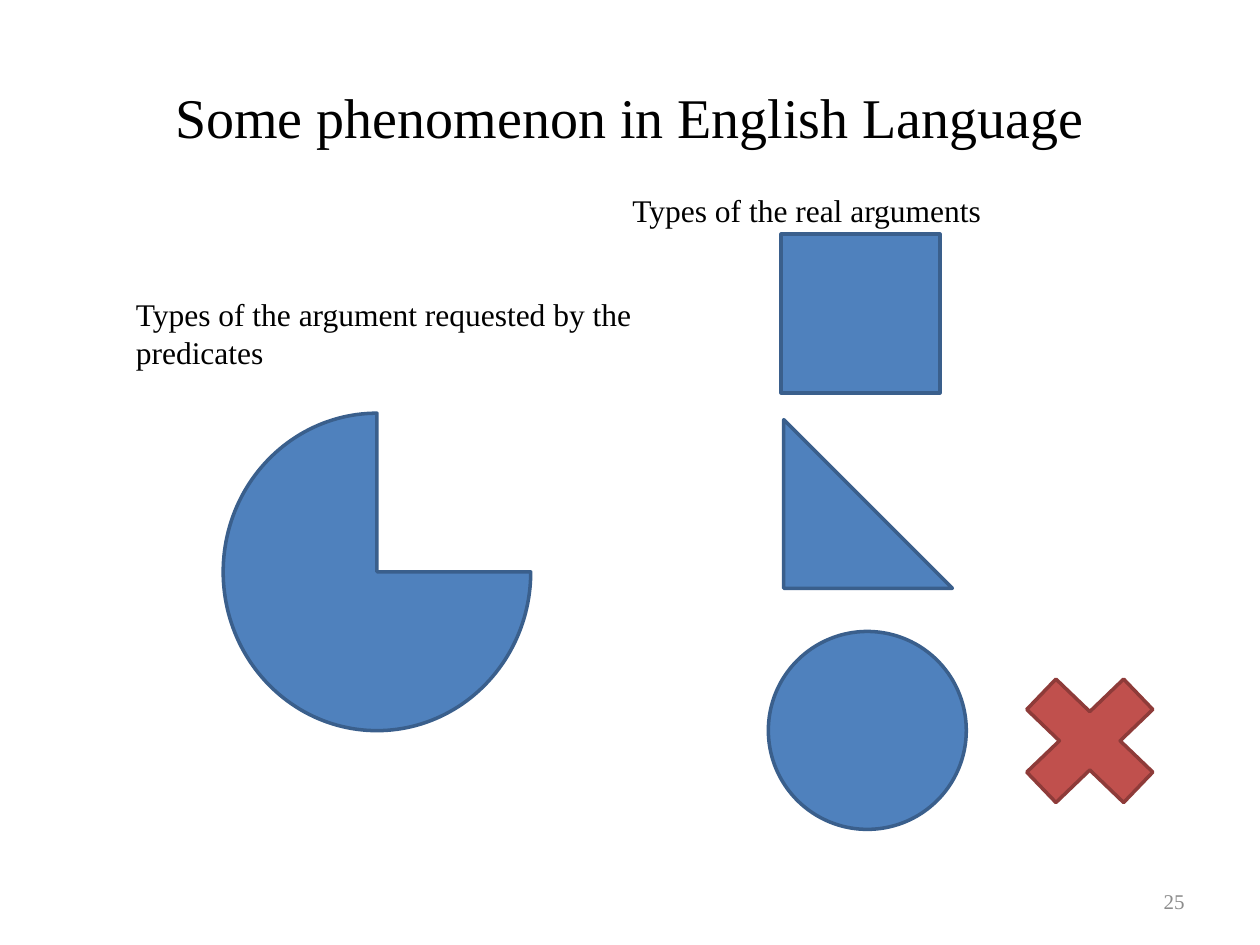
from pptx import Presentation
from pptx.dml.color import RGBColor
from pptx.enum.shapes import MSO_SHAPE
from pptx.enum.text import MSO_ANCHOR, PP_ALIGN
from pptx.util import Cm, Pt

FONT = "Times New Roman"
COLORS = {
    "text": "000000",
    "number": "8C8C8C",
    "blue": "4F81BD",
    "blue_line": "3A5F8C",
    "red": "C0504D",
    "red_line": "8E3B39",
}

# Boxes are left, top, width, height in centimetres.
TITLE = ("Some phenomenon in English Language", (1.27, 0.76, 22.86, 3.18))
LABELS = [
    ("Types of the argument requested by the predicates", (2.49, 5.82, 10.59, 1.8)),
    ("Types of the real arguments", (12.5, 3.73, 10.59, 1.02)),
]
PAGE_NUMBER = ("25", (18.21, 17.65, 5.92, 1.02))
FIGURES = [
    (MSO_SHAPE.PIE, "blue", (4.5, 8.33, 6.2, 6.4)),
    (MSO_SHAPE.RECTANGLE, "blue", (15.75, 4.72, 3.2, 3.2)),
    (MSO_SHAPE.RIGHT_TRIANGLE, "blue", (15.8, 8.46, 3.4, 3.4)),
    (MSO_SHAPE.OVAL, "blue", (15.49, 12.73, 3.99, 3.99)),
    (MSO_SHAPE.MATH_MULTIPLY, "red", (20.09, 13.13, 3.76, 3.61)),
]


def rgb(name):
    return RGBColor.from_string(COLORS[name])


def lengths(box):
    return [Cm(value) for value in box]


def write(frame, wording, size, color="text", align=PP_ALIGN.LEFT, anchor=MSO_ANCHOR.TOP):
    frame.word_wrap = True
    frame.vertical_anchor = anchor
    paragraph = frame.paragraphs[0]
    paragraph.alignment = align
    run = paragraph.add_run()
    run.text = wording
    run.font.name = FONT
    run.font.size = Pt(size)
    run.font.color.rgb = rgb(color)


def add_figure(slide, kind, color, box):
    figure = slide.shapes.add_shape(kind, *lengths(box))
    figure.shadow.inherit = False
    figure.fill.solid()
    figure.fill.fore_color.rgb = rgb(color)
    figure.line.color.rgb = rgb(f"{color}_line")
    figure.line.width = Pt(2)


def main():
    deck = Presentation()
    deck.slide_width, deck.slide_height = Cm(25.4), Cm(19.05)
    slide = deck.slides.add_slide(deck.slide_layouts[5])

    wording, box = TITLE
    title = slide.shapes.title
    title.left, title.top, title.width, title.height = lengths(box)
    write(title.text_frame, wording, 32, align=PP_ALIGN.CENTER, anchor=MSO_ANCHOR.MIDDLE)

    for kind, color, box in FIGURES:
        add_figure(slide, kind, color, box)

    for wording, box in LABELS:
        label = slide.shapes.add_textbox(*lengths(box))
        write(label.text_frame, wording, 18)

    wording, box = PAGE_NUMBER
    number = slide.shapes.add_textbox(*lengths(box))
    write(number.text_frame, wording, 12, "number", PP_ALIGN.RIGHT, MSO_ANCHOR.MIDDLE)

    deck.save("out.pptx")


if __name__ == "__main__":
    main()
